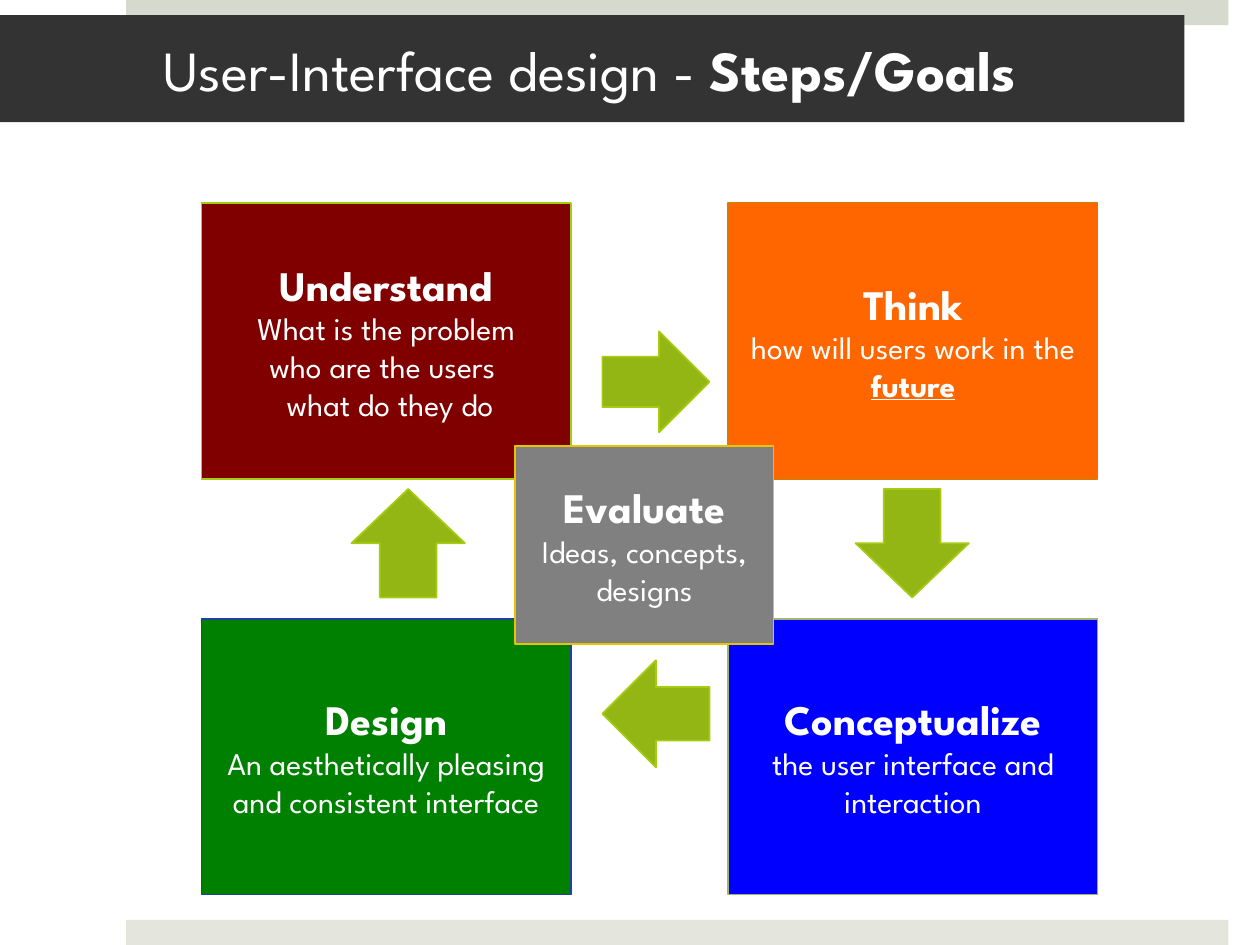
from pptx import Presentation
from pptx.dml.color import RGBColor
from pptx.enum.shapes import MSO_SHAPE
from pptx.enum.text import MSO_ANCHOR, PP_ALIGN
from pptx.util import Pt

RECT = MSO_SHAPE.RECTANGLE
RIGHT, DOWN = MSO_SHAPE.RIGHT_ARROW, MSO_SHAPE.DOWN_ARROW
LEFT, UP = MSO_SHAPE.LEFT_ARROW, MSO_SHAPE.UP_ARROW
MIDDLE = MSO_ANCHOR.MIDDLE
START, CENTER = PP_ALIGN.LEFT, PP_ALIGN.CENTER


def color(code):
    return RGBColor.from_string(code)


def write(par, text, size=18, bold=False, under=False, font="League Spartan", ink="FFFFFF"):
    """Add text to a paragraph; each newline becomes a line break."""
    for i, line in enumerate(text.split("\n")):
        if i:
            par.add_line_break()
        if line:
            run = par.add_run()
            run.text = line
            run.font.name, run.font.size = font, Pt(size)
            run.font.bold, run.font.underline = bold, under
            run.font.color.rgb = color(ink)


class Deck:
    head, body, title = 24, 18, 32.4
    green, edge = "93B614", "A5CC12"

    def __init__(self, slide):
        self.slide = slide

    def shape(self, kind, box, fill, line=None):
        item = self.slide.shapes.add_shape(kind, *map(Pt, box))
        item.shadow.inherit = False
        item.fill.solid()
        item.fill.fore_color.rgb = color(fill)
        if line:
            item.line.color.rgb = color(line)
            item.line.width = Pt(1)
        else:
            item.line.fill.background()
        return item

    def arrow(self, kind, box):
        self.shape(kind, box, self.green, self.edge)

    def frame(self, item, align):
        frame = item.text_frame
        frame.word_wrap = True
        frame.vertical_anchor = MIDDLE
        frame.paragraphs[0].alignment = align
        return frame

    def banner(self, box, fill, plain, strong):
        frame = self.frame(self.shape(RECT, box, fill), START)
        frame.margin_left, frame.margin_right = Pt(93.6), Pt(21.6)
        par = frame.paragraphs[0]
        write(par, plain, size=self.title)
        write(par, strong, size=self.title, bold=True)

    def card(self, box, fill, line, head, text, key="", split=False):
        """Draw a heading and text; split puts them in two paragraphs."""
        frame = self.frame(self.shape(RECT, box, fill, line), CENTER)
        par = frame.paragraphs[0]
        write(par, head, size=self.head, bold=True)
        if split:
            par = frame.add_paragraph()
            par.alignment = CENTER
        else:
            par.add_line_break()
        write(par, text, size=self.body)
        write(par, key, size=self.body, bold=True, under=True)


def main():
    prs = Presentation()
    prs.slide_width, prs.slide_height = Pt(720), Pt(540)
    deck = Deck(prs.slides.add_slide(prs.slide_layouts[6]))

    # Edge bars and title
    deck.shape(RECT, (72, 0, 630, 14.4), "D6D9CD")
    deck.shape(RECT, (72, 525.6, 630, 14.4), "E4E6DE")
    deck.banner((0, 8.6, 676.8, 61.2), "333333", "User-Interface design - ", "Steps/Goals")

    # Four steps on a two by two grid
    cols, rows, size = (115.2, 416.2), (116, 353.5), (211, 157.7)
    steps = [
        (0, 0, "800000", "A5CC12", "Understand",
         "What is the problem\nwho are the users \n what do they do", "", False),
        (1, 0, "FF6600", "E27600", "Think", "how will users work in the ", "future", False),
        (1, 1, "0000FF", "A3B36E", "Conceptualize",
         "the user interface and interaction", "", False),
        (0, 1, "008000", "1E439E", "Design",
         "An aesthetically pleasing and consistent interface", "", True),
    ]
    for col, row, *rest in steps:
        deck.card((cols[col], rows[row], *size), *rest)

    # Arrows around the cycle
    deck.arrow(RIGHT, (344.2, 189.4, 61.2, 57.6))
    deck.arrow(DOWN, (488.9, 279.4, 64.8, 62))
    deck.arrow(LEFT, (344.2, 377.3, 61.2, 61.2))
    deck.arrow(UP, (200.9, 279.4, 64.8, 62))

    # Centre
    deck.card((294.5, 254.9, 147.6, 113), "808080", "E6C500", "Evaluate",
              "Ideas, concepts, designs", split=True)

    prs.save("out.pptx")


if __name__ == "__main__":
    main()
